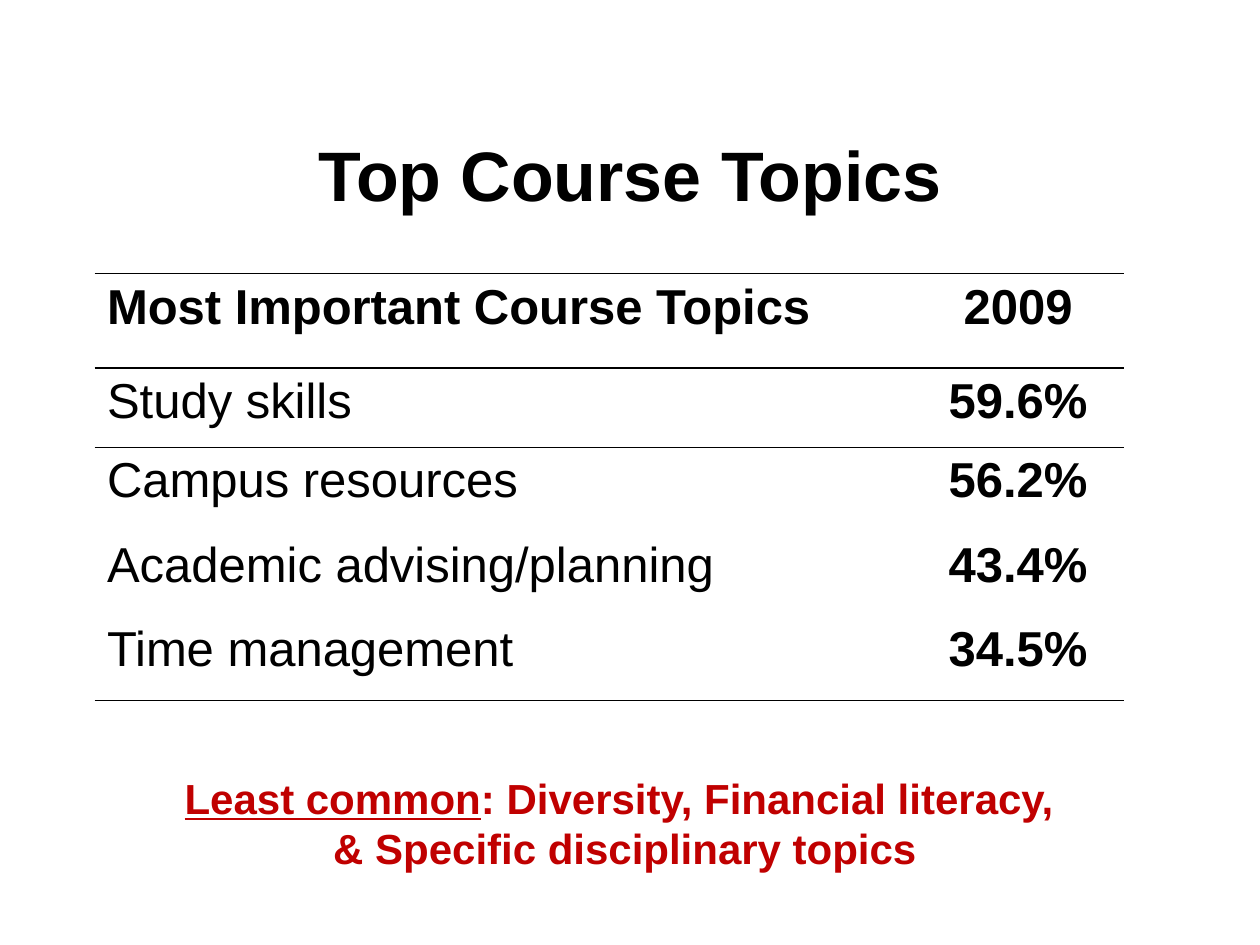
from lxml import etree
from pptx import Presentation
from pptx import util as u
from pptx.dml.color import RGBColor
from pptx.enum import text
from pptx.oxml.ns import qn

# Content
TITLE = "Top Course Topics"
ROWS = [
    ("Most Important Course Topics", "2009"),
    ("Study skills", "59.6%"),
    ("Campus resources", "56.2%"),
    ("Academic advising/planning", "43.4%"),
    ("Time management", "34.5%"),
]
NOTE_LINES = [
    [("Least common", True), (": Diversity, Financial literacy, ", False)],
    [("& Specific disciplinary topics", False)],
]

# Look and layout, in inches
COLORS = {"ink": "000000", "accent": "C00000"}
FONT = "Arial"
LEFT = 0.75
TABLE_TOP = 2.17
COLUMN_WIDTHS = [6.49, 1.68]
ROW_HEIGHTS = [0.75, 0.63] + [0.67] * 3
RULED_SIDES = {0: ("T", "B"), 1: ("T",), len(ROWS) - 1: ("B",)}
PLAIN_TABLE_STYLE = "{2D5ABB26-0587-4C30-8999-92F81FD0307C}"


def format_paragraph(paragraph, size, color="ink", bold=True, centered=True):
    font = paragraph.font
    font.name, font.size, font.bold = FONT, u.Pt(size), bold
    font.color.rgb = RGBColor.from_string(COLORS[color])
    paragraph.alignment = text.PP_ALIGN.CENTER if centered else text.PP_ALIGN.LEFT


def rule_cell(cell, side):
    properties = cell._tc.get_or_add_tcPr()
    line = etree.SubElement(properties, qn(f"a:ln{side}"), w=str(u.Pt(1)))
    fill = etree.SubElement(line, qn("a:solidFill"))
    etree.SubElement(fill, qn("a:srgbClr"), val=COLORS["ink"])


presentation = Presentation()
presentation.slide_width, presentation.slide_height = u.Inches(10), u.Inches(7.5)
slide = presentation.slides.add_slide(presentation.slide_layouts[5])

# Title
title = slide.shapes.title
title.left, title.top = u.Inches(LEFT), u.Inches(0.75)
title.width, title.height = u.Inches(10 - 2 * LEFT), u.Inches(1.25)
title.text_frame.text = TITLE
title.text_frame.vertical_anchor = text.MSO_ANCHOR.MIDDLE
format_paragraph(title.text_frame.paragraphs[0], 40)

# Topic table
frame = slide.shapes.add_table(
    len(ROWS), len(COLUMN_WIDTHS), u.Inches(LEFT), u.Inches(TABLE_TOP),
    u.Inches(sum(COLUMN_WIDTHS)), u.Inches(sum(ROW_HEIGHTS)))
table = frame.table
table.first_row = table.horz_banding = False
table._tbl.tblPr.find(qn("a:tableStyleId")).text = PLAIN_TABLE_STYLE
for column, width in zip(table.columns, COLUMN_WIDTHS):
    column.width = u.Inches(width)
for row, height in zip(table.rows, ROW_HEIGHTS):
    row.height = u.Inches(height)
for row_index, values in enumerate(ROWS):
    for column_index, value in enumerate(values):
        cell = table.cell(row_index, column_index)
        cell.text = value
        is_value = column_index == 1
        format_paragraph(cell.text_frame.paragraphs[0], 28,
                         bold=is_value or row_index == 0, centered=is_value)
        for side in RULED_SIDES.get(row_index, ()):
            rule_cell(cell, side)
        cell.fill.background()

# Closing note
note = slide.shapes.add_textbox(
    u.Inches(0.25), u.Inches(6.08), u.Inches(9.42), u.Inches(0.91))
note_frame = note.text_frame
note_frame.word_wrap = True
note_frame.auto_size = text.MSO_AUTO_SIZE.SHAPE_TO_FIT_TEXT
for index, runs in enumerate(NOTE_LINES):
    paragraph = note_frame.add_paragraph() if index else note_frame.paragraphs[0]
    format_paragraph(paragraph, 24, "accent")
    for words, underlined in runs:
        run = paragraph.add_run()
        run.text = words
        run.font.underline = underlined

presentation.save("out.pptx")
